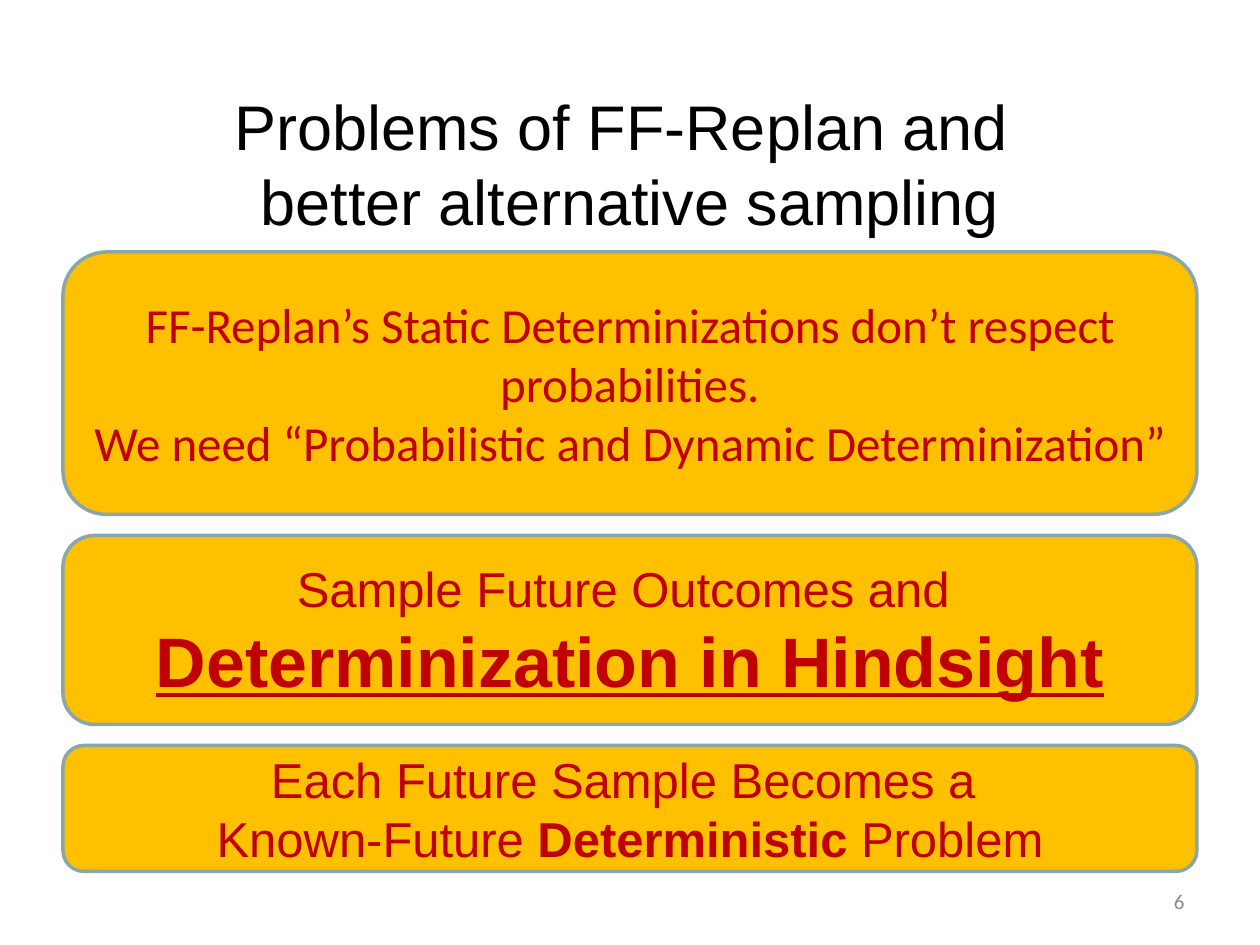
from pptx import Presentation
from pptx.dml.color import RGBColor
from pptx.enum.shapes import MSO_SHAPE
from pptx.enum.text import MSO_ANCHOR, PP_ALIGN
from pptx.util import Emu, Pt

EMU_PER_PX = 7620  # 120 px to the inch

BLACK = RGBColor(0x00, 0x00, 0x00)
GRAY = RGBColor(0x89, 0x89, 0x89)
AMBER = RGBColor(0xFF, 0xC0, 0x00)
TEAL = RGBColor(0x8A, 0xA6, 0xA8)
RED = RGBColor(0xC0, 0x00, 0x00)

TITLE_LINES = ["Problems of FF-Replan and ", "better alternative sampling"]

# Each box: height, font, paragraphs of (text, size, emphasis) runs
BOX_LEFT, BOX_TOP, BOX_WIDTH, BOX_GAP = 60, 240, 1080, 20
BOXES = [
    (250, "Calibri", [
        [("FF-Replan’s Static Determinizations don’t respect probabilities.", 28, "")],
        [("We need “Probabilistic and Dynamic Determinization”", 28, "")],
    ]),
    (180, "Arial", [
        [("Sample Future Outcomes and ", 28, "")],
        [("Determinization in Hindsight", 40, "bold underline")],
    ]),
    (120, "Arial", [
        [("Each Future Sample Becomes a ", 28, "")],
        [("Known-Future ", 28, ""), ("Deterministic", 28, "bold"), (" Problem", 28, "")],
    ]),
]


def px(length):
    return Emu(length * EMU_PER_PX)


def add_run(paragraph, text, size, font_name, color, emphasis=""):
    run = paragraph.add_run()
    run.text = text
    font = run.font
    font.size = Pt(size)
    font.name = font_name
    font.color.rgb = color
    font.bold = "bold" in emphasis
    font.underline = "underline" in emphasis


def prepare_frame(shape):
    frame = shape.text_frame
    frame.word_wrap = True
    frame.vertical_anchor = MSO_ANCHOR.MIDDLE
    return frame


def format_title(slide):
    title = slide.shapes.title
    title.left, title.top, title.width, title.height = map(px, (90, 80, 1020, 150))
    paragraph = prepare_frame(title).paragraphs[0]
    paragraph.alignment = PP_ALIGN.CENTER
    for index, line in enumerate(TITLE_LINES):
        if index:
            paragraph.add_line_break()
        add_run(paragraph, line, 36, "Arial", BLACK)


def add_box(slide, top, height, font_name, paragraphs):
    box = slide.shapes.add_shape(
        MSO_SHAPE.ROUNDED_RECTANGLE, px(BOX_LEFT), px(top), px(BOX_WIDTH), px(height))
    box.shadow.inherit = False
    box.fill.solid()
    box.fill.fore_color.rgb = AMBER
    box.line.color.rgb = TEAL
    box.line.width = Pt(2)
    frame = prepare_frame(box)
    for index, runs in enumerate(paragraphs):
        paragraph = frame.add_paragraph() if index else frame.paragraphs[0]
        paragraph.alignment = PP_ALIGN.CENTER
        for text, size, emphasis in runs:
            add_run(paragraph, text, size, font_name, RED, emphasis)


def add_slide_number(slide, number):
    box = slide.shapes.add_textbox(px(860), px(834), px(280), px(48))
    paragraph = prepare_frame(box).paragraphs[0]
    paragraph.alignment = PP_ALIGN.RIGHT
    add_run(paragraph, number, 12, "Calibri", GRAY)


def main():
    presentation = Presentation()
    presentation.slide_width, presentation.slide_height = px(1200), px(900)
    slide = presentation.slides.add_slide(presentation.slide_layouts[5])

    format_title(slide)
    add_slide_number(slide, "6")

    # Boxes stacked with equal gaps
    top = BOX_TOP
    for height, font_name, paragraphs in BOXES:
        add_box(slide, top, height, font_name, paragraphs)
        top += height + BOX_GAP

    presentation.save("out.pptx")


if __name__ == "__main__":
    main()
